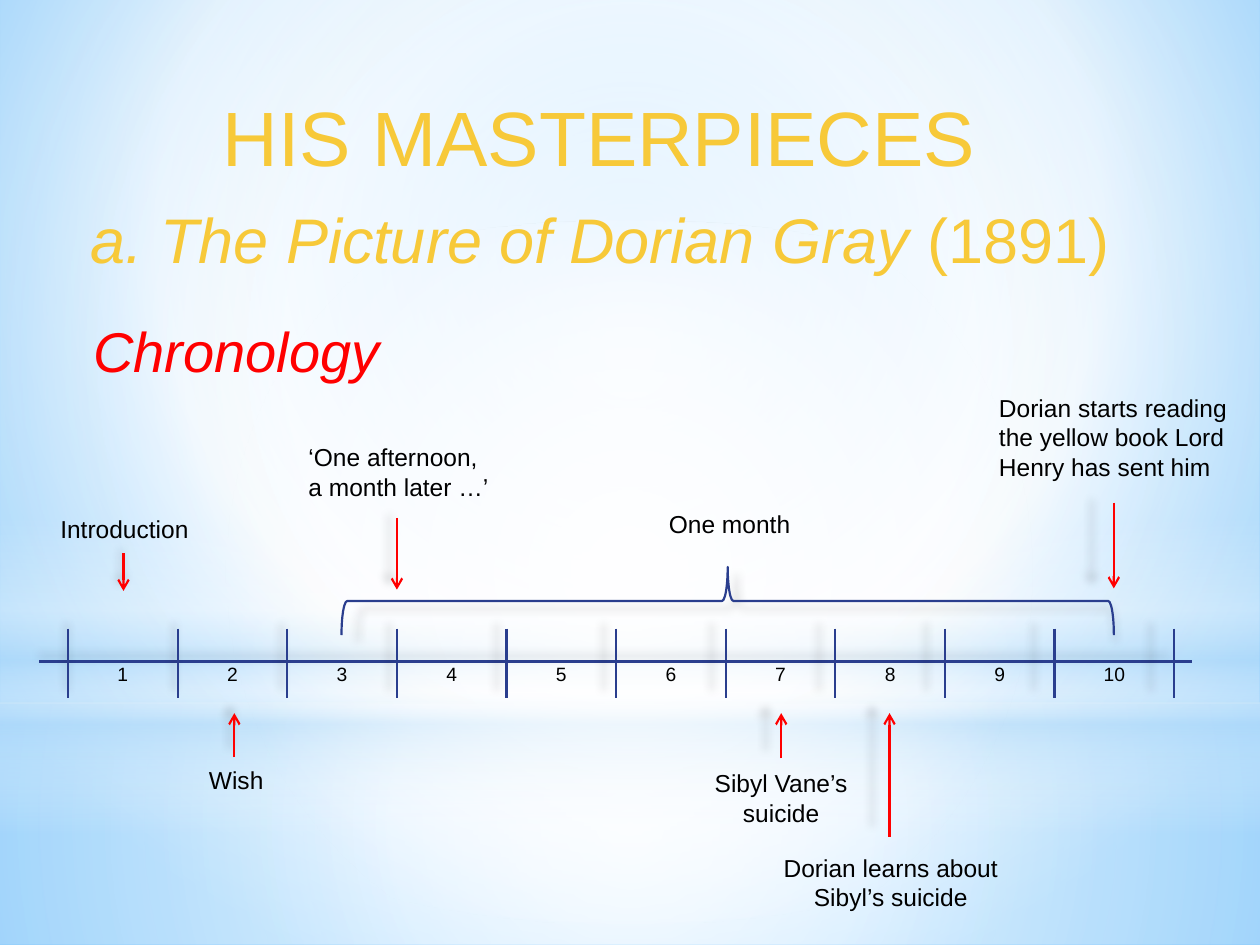
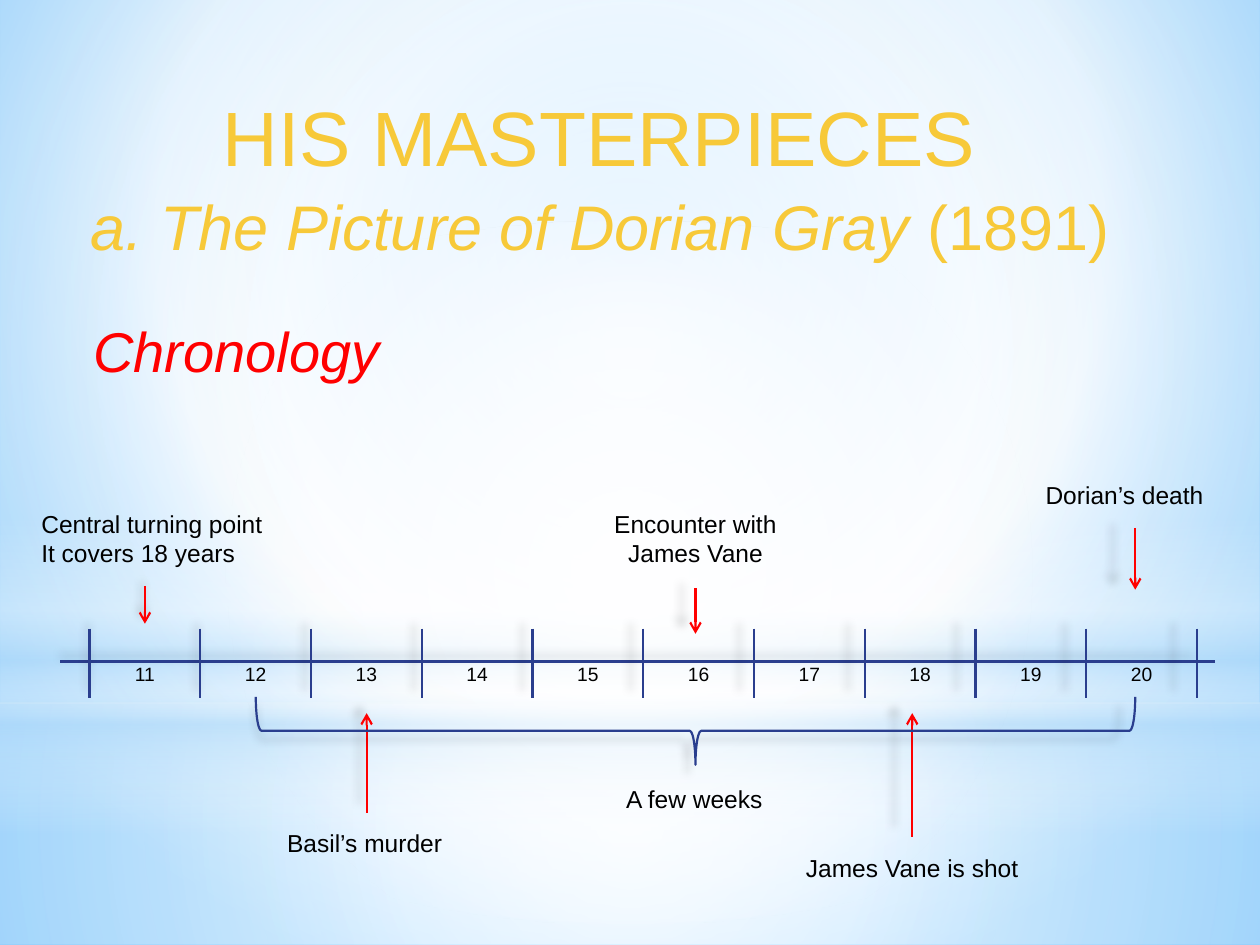
from typing import NamedTuple

from lxml import etree
from pptx import Presentation
from pptx.dml.color import RGBColor
from pptx.enum import shapes, text
from pptx.oxml import ns
from pptx.util import Inches, Pt

FONT = "Arial"
GOLD = RGBColor(0xF7, 0xC9, 0x39)
RED = RGBColor(0xFF, 0x00, 0x00)
BLACK = RGBColor(0x00, 0x00, 0x00)
NAVY = RGBColor(0x2A, 0x3E, 0x8E)
WHITE = RGBColor(0xFF, 0xFF, 0xFF)
PALE = RGBColor(0xB4, 0xDC, 0xFA)
SKY = RGBColor(0x9E, 0xD5, 0xFF)
AZURE = RGBColor(0x5B, 0xB9, 0xFF)

LEFT, CENTER = text.PP_ALIGN.LEFT, text.PP_ALIGN.CENTER
RECT, OVAL = shapes.MSO_SHAPE.RECTANGLE, shapes.MSO_SHAPE.OVAL

AXIS_Y, TICK_TOP, TICK_BOTTOM = 5.25, 4.99, 5.54
AXIS_OVERHANG = (0.23, 0.14)
BRACE_DEPTH = 0.54


class Stop(NamedTuple):
    position: int
    color: RGBColor
    alpha: int = 100


class Gradient(NamedTuple):
    stops: list[Stop]
    focus: tuple[int, int, int, int] | None = (50, 50, 50, 50)


class Band(NamedTuple):
    shape: shapes.MSO_SHAPE
    top: float
    height: float
    gradient: Gradient


class Label(NamedTuple):
    text: str
    left: float
    top: float
    width: float
    align: text.PP_ALIGN = LEFT
    wrap: bool = False


class Arrow(NamedTuple):
    x: float
    start: float
    end: float


class Brace(NamedTuple):
    left: float
    right: float
    top: float
    rotation: int


class Timeline(NamedTuple):
    first_chapter: int
    ticks: list[float]
    title_gap: float
    labels: list[Label]
    arrows: list[Arrow]
    brace: Brace


BACKGROUND = Gradient([Stop(0, SKY), Stop(60, WHITE), Stop(100, AZURE)], (20, 10, 20, 60))
BANDS = [
    Band(RECT, 5.58, 1.92, Gradient([Stop(0, WHITE, 91), Stop(37, WHITE, 76), Stop(100, PALE, 79)])),
    Band(RECT, 0, 5.58, Gradient([Stop(0, WHITE, 89), Stop(48, WHITE, 62), Stop(100, PALE, 79)])),
    Band(RECT, 4.12, 2.5, Gradient(
        [Stop(0, WHITE, 0), Stop(29, WHITE, 30), Stop(45, PALE, 40),
         Stop(55, WHITE, 26), Stop(65, PALE, 60), Stop(100, WHITE, 0)], None)),
    Band(OVAL, 1.75, 5.58, Gradient([Stop(0, WHITE), Stop(56, WHITE, 0)])),
]

TIMELINES = [
    Timeline(
        first_chapter=1,
        ticks=[0.54 + 0.87 * i for i in range(10)] + [9.32],
        title_gap=7.2,
        labels=[
            Label("Introduction", 0.38, 4.03, 1.22),
            Label("Wish", 1.56, 6.02, 0.64),
            Label("‘One afternoon,\na month later …’", 2.35, 3.46, 1.63),
            Label("Sibyl Vane’s\nsuicide", 5.57, 6.05, 1.26, CENTER),
            Label("Dorian learns about\nSibyl’s suicide", 6.11, 6.72, 1.92, CENTER),
            Label("Dorian starts reading the yellow book Lord Henry has sent him",
                  7.83, 3.07, 2.02, wrap=True),
            Label("One month", 5.21, 3.99, 1.17),
        ],
        arrows=[Arrow(0.98, 4.39, 4.69), Arrow(1.86, 6.01, 5.66), Arrow(3.15, 4.11, 4.68),
                Arrow(6.2, 6.02, 5.66), Arrow(7.06, 6.64, 5.66), Arrow(8.84, 3.99, 4.67)],
        brace=Brace(2.71, 8.84, 4.5, 90),
    ),
    Timeline(
        first_chapter=11,
        ticks=[0.71 + (9.5 - 0.71) / 10 * i for i in range(11)],
        title_gap=0,
        labels=[
            Label("Central turning point\nIt covers 18 years", 0.23, 3.99, 1.97),
            Label("Basil’s murder", 2.18, 6.52, 1.45),
            Label("Encounter with\nJames Vane", 4.77, 3.99, 1.5, CENTER),
            Label("James Vane is shot", 6.29, 6.72, 1.9, CENTER),
            Label("Dorian’s death", 8.2, 3.76, 1.63, wrap=True),
            Label("A few weeks", 4.87, 6.17, 1.29),
        ],
        arrows=[Arrow(1.15, 4.65, 4.95), Arrow(2.91, 6.45, 5.66), Arrow(5.52, 4.67, 5.03),
                Arrow(7.24, 6.64, 5.66), Arrow(9.01, 4.19, 4.68)],
        brace=Brace(2.03, 9.01, 5.53, 270),
    ),
]


def add_xml(parent, tag: str, **attributes):
    values = {name: str(value) for name, value in attributes.items()}
    return etree.SubElement(parent, ns.qn(tag), values)


def add_color(parent, color: RGBColor, alpha: int) -> None:
    add_xml(add_xml(parent, "a:srgbClr", val=color), "a:alpha", val=alpha * 1000)


def set_gradient(fill, element, gradient: Gradient) -> None:
    fill.gradient()
    grad = element.find(".//" + ns.qn("a:gradFill"))
    for child in list(grad):
        grad.remove(child)
    stops = add_xml(grad, "a:gsLst")
    for stop in gradient.stops:
        add_color(add_xml(stops, "a:gs", pos=stop.position * 1000), stop.color, stop.alpha)
    if gradient.focus is None:
        add_xml(grad, "a:lin", ang=5400000, scaled=0)
    else:
        sides = {side: inset * 1000 for side, inset in zip("ltrb", gradient.focus)}
        add_xml(add_xml(grad, "a:path", path="circle"), "a:fillToRect", **sides)


def add_shadow(shape) -> None:
    effects = add_xml(shape.element.spPr, "a:effectLst")
    shadow = add_xml(effects, "a:outerShdw", blurRad=Pt(5), dist=Pt(4), dir=5400000,
                     sx=98000, sy=98000, algn="tl", rotWithShape=0)
    add_color(shadow, BLACK, 20)


def style_run(r, size: float, color: RGBColor, italic: bool = False) -> None:
    r.font.name = FONT
    r.font.size = Pt(size)
    r.font.color.rgb = color
    r.font.italic = italic


def build_backdrop(layout, slide) -> None:
    """Draw the bands, then hand them to the layout both slides share."""
    set_gradient(layout.background.fill, layout.element, BACKGROUND)
    for i, band in enumerate(BANDS):
        sp = slide.shapes.add_shape(band.shape, 0, Inches(band.top), Inches(10), Inches(band.height))
        set_gradient(sp.fill, sp.element, band.gradient)
        sp.line.fill.background()
        sp.shadow.inherit = False
        sp.element.nvSpPr.cNvPr.set("id", str(20 + i))
        layout.shapes.element.insert(2 + i, sp.element)


def add_title(slide, gap: float) -> None:
    sp = slide.shapes.title
    sp.left, sp.top, sp.width, sp.height = Inches(0.23), Inches(0.6), Inches(9.06), Inches(1.86)
    tf = sp.text_frame
    tf.auto_size = text.MSO_AUTO_SIZE.NONE
    tf.vertical_anchor = text.MSO_ANCHOR.TOP
    tf.text = "HIS MASTERPIECES\na. The Picture of Dorian Gray "
    heading, work = tf.paragraphs
    work.add_run().text = "(1891)"
    work.space_before = Pt(gap)
    for p in tf.paragraphs:
        p.alignment = CENTER
        p.line_spacing = 1.08
    style_run(heading.runs[0], 44, GOLD)
    style_run(work.runs[0], 36, GOLD, italic=True)
    style_run(work.runs[1], 36, GOLD)


def add_label(slide, label: Label, size: float = 14, color: RGBColor = BLACK,
              italic: bool = False) -> None:
    lines = 3 if label.wrap else label.text.count("\n") + 1
    height = 0.1 + lines * size * 1.17 / 72
    sp = slide.shapes.add_textbox(Inches(label.left), Inches(label.top),
                                  Inches(label.width), Inches(height))
    tf = sp.text_frame
    tf.word_wrap = label.wrap
    tf.auto_size = text.MSO_AUTO_SIZE.SHAPE_TO_FIT_TEXT
    tf.text = label.text
    for p in tf.paragraphs:
        p.alignment = label.align
        style_run(p.runs[0], size, color, italic)


def add_line(slide, x1: float, y1: float, x2: float, y2: float,
             color: RGBColor = NAVY, arrow: bool = False) -> None:
    line = slide.shapes.add_connector(shapes.MSO_CONNECTOR.STRAIGHT,
                                      Inches(x1), Inches(y1), Inches(x2), Inches(y2))
    line.line.color.rgb = color
    line.line.width = Pt(1.25)
    if arrow:
        add_xml(line.line._get_or_add_ln(), "a:tailEnd", type="arrow")
    add_shadow(line)


def add_brace(slide, brace: Brace) -> None:
    span = brace.right - brace.left
    left = (brace.left + brace.right - BRACE_DEPTH) / 2
    top = brace.top + (BRACE_DEPTH - span) / 2
    sp = slide.shapes.add_shape(shapes.MSO_SHAPE.LEFT_BRACE, Inches(left), Inches(top),
                                Inches(BRACE_DEPTH), Inches(span))
    sp.rotation = brace.rotation
    sp.fill.background()
    sp.line.color.rgb = NAVY
    sp.line.width = Pt(1.25)
    add_shadow(sp)


def add_timeline(slide, timeline: Timeline) -> None:
    add_title(slide, timeline.title_gap)
    add_label(slide, Label("Chronology", 0.64, 2.46, 2.49), 32, RED, italic=True)

    # Axis, chapter ticks and chapter numbers
    ticks = timeline.ticks
    before, after = AXIS_OVERHANG
    add_line(slide, ticks[0] - before, AXIS_Y, ticks[-1] + after, AXIS_Y)
    for x in ticks:
        add_line(slide, x, TICK_TOP, x, TICK_BOTTOM)
    for chapter, (x1, x2) in enumerate(zip(ticks, ticks[1:]), timeline.first_chapter):
        width = 0.29 if chapter < 10 else 0.37
        left = (x1 + x2 - width) / 2
        add_label(slide, Label(str(chapter), left, 5.21, width, CENTER), 11)

    # Events
    for arrow in timeline.arrows:
        add_line(slide, arrow.x, arrow.start, arrow.x, arrow.end, RED, arrow=True)
    add_brace(slide, timeline.brace)
    for label in timeline.labels:
        add_label(slide, label)


def main() -> None:
    prs = Presentation()
    prs.slide_width, prs.slide_height = Inches(10), Inches(7.5)
    layout = prs.slide_layouts.get_by_name("Title Only")
    slides = [prs.slides.add_slide(layout) for _ in TIMELINES]
    build_backdrop(layout, slides[0])
    for slide, timeline in zip(slides, TIMELINES):
        add_timeline(slide, timeline)
    prs.save("out.pptx")


if __name__ == "__main__":
    main()
